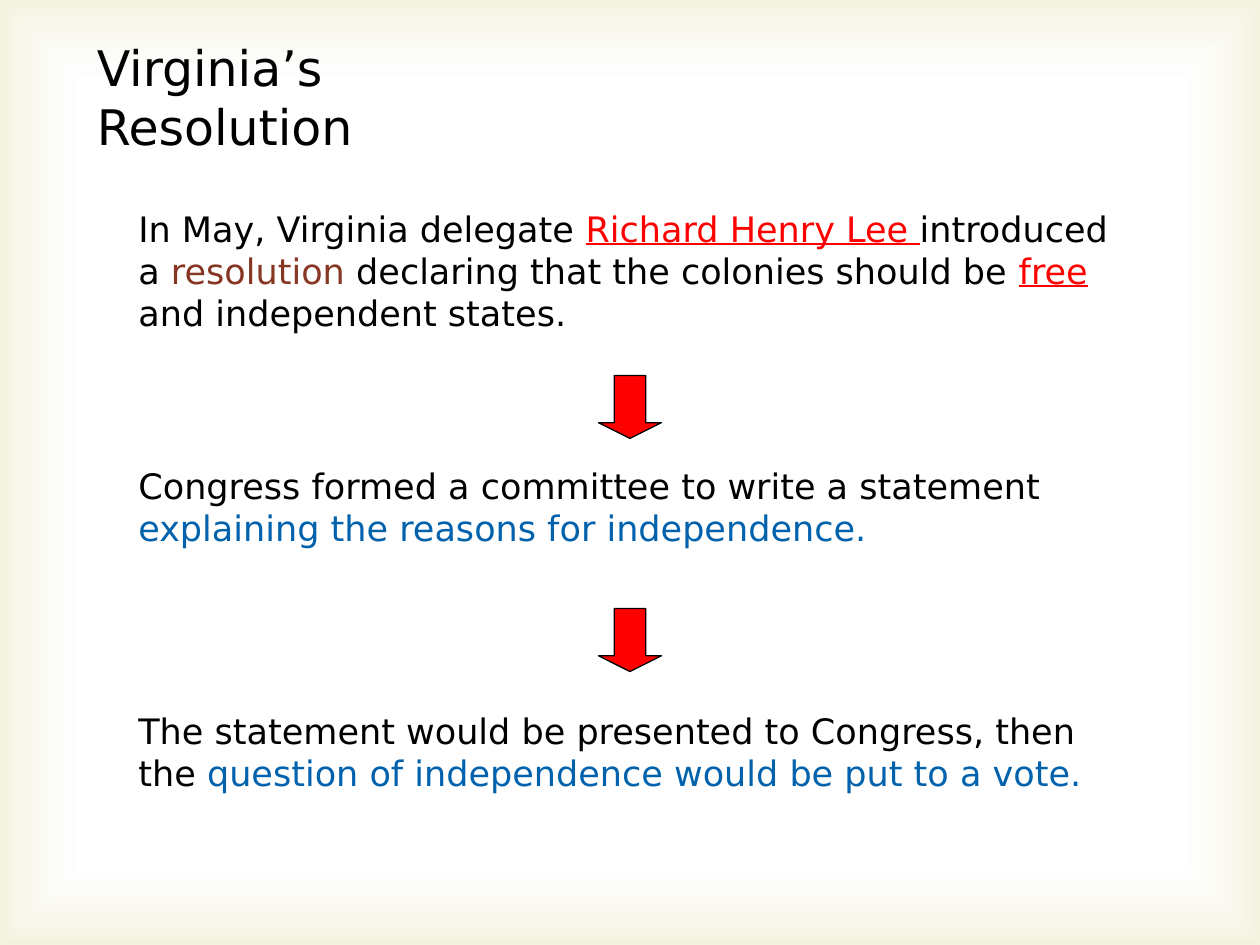
from lxml.etree import SubElement
from pptx import Presentation
from pptx.dml.color import RGBColor
from pptx.enum.shapes import MSO_SHAPE
from pptx.enum.text import MSO_AUTO_SIZE
from pptx.oxml import parse_xml
from pptx.oxml.ns import nsdecls, qn
from pptx.util import Inches, Pt

BLACK = RGBColor(0x00, 0x00, 0x00)
RED = RGBColor(0xFF, 0x00, 0x00)
BROWN = RGBColor(0x87, 0x36, 0x24)
BLUE = RGBColor(0x00, 0x62, 0xAC)
WHITE = RGBColor(0xFF, 0xFF, 0xFF)
OLIVE = RGBColor(0xD1, 0xCA, 0x75)

FONT = "DejaVu Sans"
WIDTH, HEIGHT = 10, 7.5
ARROW_SIZE = 0.5
ARROW_TOPS = [2.98, 4.83]
VIGNETTE_STOPS = [(83, WHITE, 11), (100, OLIVE, 23)]

TITLE = [("Virginia’s Resolution", BLACK, False)]
STEPS = [
    (1.6, 1.11, [
        ("In May, Virginia delegate ", BLACK, False),
        ("Richard Henry Lee ", RED, True),
        ("introduced a ", BLACK, False),
        ("resolution", BROWN, False),
        (" declaring that the colonies should be ", BLACK, False),
        ("free", RED, True),
        (" and independent states.", BLACK, False),
    ]),
    (3.64, 0.77, [
        ("Congress formed a committee to write a statement ", BLACK, False),
        ("explaining the reasons for independence.", BLUE, False),
    ]),
    (5.58, 0.77, [
        ("The statement would be presented to Congress, then the ", BLACK, False),
        ("question of independence would be put to a vote.", BLUE, False),
    ]),
]


def add_vignette(slide):
    shape = slide.shapes.add_shape(
        MSO_SHAPE.RECTANGLE, 0, 0, Inches(WIDTH), Inches(HEIGHT))
    shape.shadow.inherit = False
    shape.line.fill.background()
    gradient = parse_xml(f'<a:gradFill {nsdecls("a")} rotWithShape="1"/>')
    stops = SubElement(gradient, qn("a:gsLst"))
    for position, color, opacity in VIGNETTE_STOPS:
        stop = SubElement(stops, qn("a:gs"), pos=str(position * 1000))
        value = SubElement(stop, qn("a:srgbClr"), val=str(color))
        SubElement(value, qn("a:alpha"), val=str(opacity * 1000))
    shade = SubElement(gradient, qn("a:path"), path="rect")
    SubElement(shade, qn("a:fillToRect"),
               {side: "50000" for side in ("l", "t", "r", "b")})
    shape._element.spPr.find(qn("a:prstGeom")).addnext(gradient)


def add_text(slide, left, top, width, height, size, runs):
    box = slide.shapes.add_textbox(
        Inches(left), Inches(top), Inches(width), Inches(height))
    frame = box.text_frame
    frame.word_wrap = True
    frame.auto_size = MSO_AUTO_SIZE.SHAPE_TO_FIT_TEXT
    paragraph = frame.paragraphs[0]
    paragraph.font.name = FONT
    paragraph.font.size = Pt(size)
    for text, color, underlined in runs:
        run = paragraph.add_run()
        run.text = text
        run.font.color.rgb = color
        if underlined:
            run.font.underline = True


def add_arrow(slide, top):
    arrow = slide.shapes.add_shape(
        MSO_SHAPE.DOWN_ARROW, Inches((WIDTH - ARROW_SIZE) / 2), Inches(top),
        Inches(ARROW_SIZE), Inches(ARROW_SIZE))
    arrow.adjustments[0] = 0.5
    arrow.adjustments[1] = 0.25
    arrow.shadow.inherit = False
    arrow.fill.solid()
    arrow.fill.fore_color.rgb = RED
    arrow.line.color.rgb = BLACK
    arrow.line.width = Pt(0.75)


def main():
    presentation = Presentation()
    presentation.slide_width = Inches(WIDTH)
    presentation.slide_height = Inches(HEIGHT)
    slide = presentation.slides.add_slide(presentation.slide_layouts[6])
    slide.background.fill.solid()
    slide.background.fill.fore_color.rgb = WHITE
    add_vignette(slide)
    for top, height, runs in STEPS:
        add_text(slide, 1, top, 8, height, 20, runs)
    for top in ARROW_TOPS:
        add_arrow(slide, top)
    add_text(slide, 0.67, 0.25, 3.76, 1.04, 28, TITLE)
    presentation.save("out.pptx")


if __name__ == "__main__":
    main()
